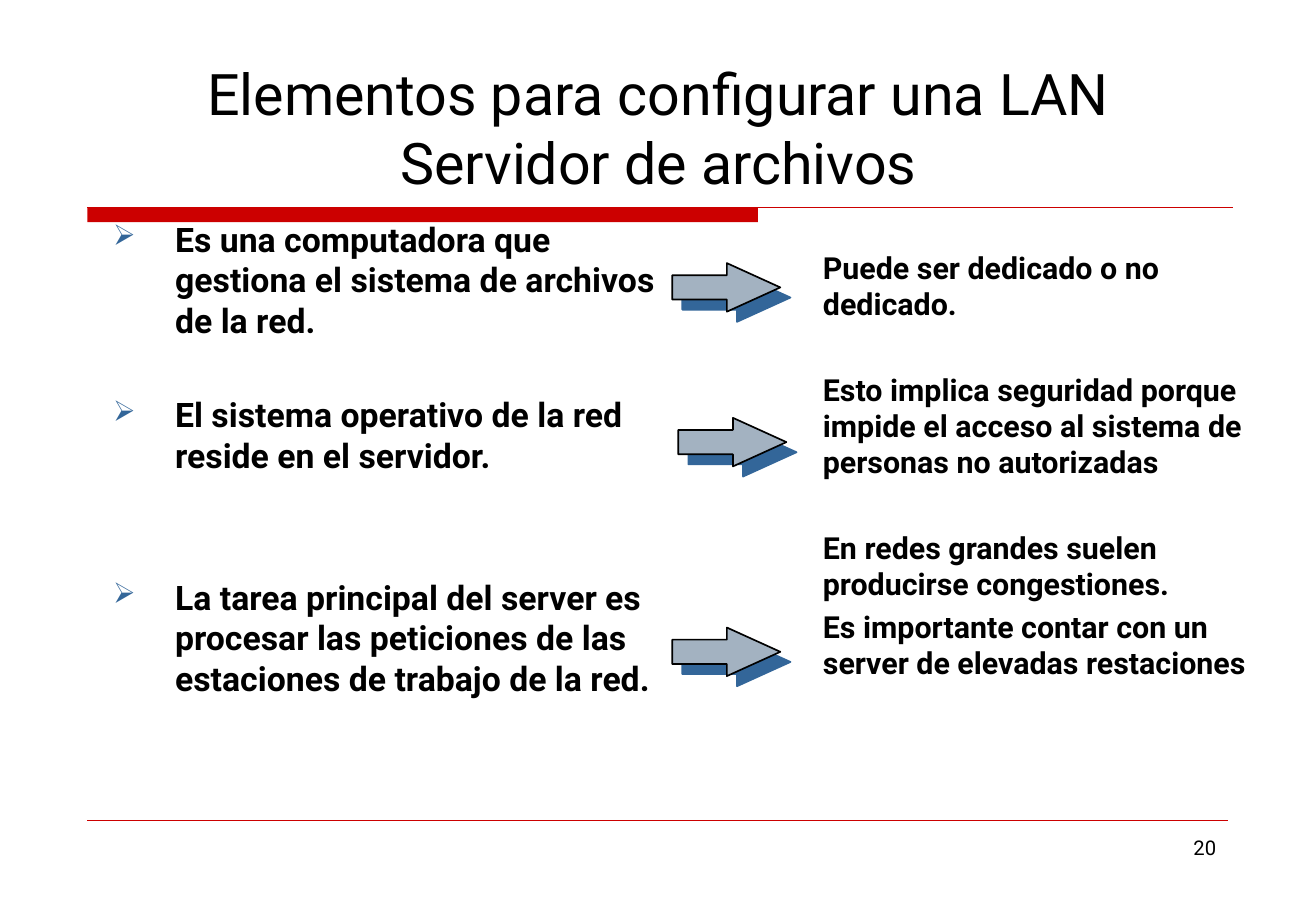
from typing import NamedTuple

from lxml.etree import SubElement
from pptx import Presentation
from pptx.dml.color import RGBColor
from pptx.enum.shapes import MSO_CONNECTOR as Link, MSO_SHAPE as Shape
from pptx.enum.text import MSO_ANCHOR as Anchor, PP_ALIGN as Align
from pptx.oxml.ns import qn
from pptx.util import Inches, Pt

BLACK = RGBColor(0, 0, 0)
RED = RGBColor(0xCC, 0, 0)
BLUE = RGBColor(0x33, 0x66, 0x99)
GREY_BLUE = RGBColor(0xA3, 0xB2, 0xC1)
FONT = "Roboto"
COLUMNS, ROWS = 130, 90
CELL = Inches(1 / 12)
INDENT = 6.12


class Box(NamedTuple):
    """A rectangle in grid columns and rows."""
    left: float
    top: float
    width: float
    height: float

    def lengths(self):
        """Return the rectangle in slide units."""
        return [cells(value) for value in self]


def cells(count):
    """Convert grid cells to slide units."""
    return int(count * CELL)


def add_text_box(page, box, anchor=Anchor.TOP):
    """Add a wrapping text frame."""
    frame = page.shapes.add_textbox(*box.lengths()).text_frame
    frame.word_wrap = True
    frame.vertical_anchor = anchor
    return frame


def add_span(para, text, size, bold=False):
    """Add one run of black text."""
    span = para.add_run()
    span.text = text
    span.font.name = FONT
    span.font.size = Pt(size)
    span.font.bold = bold
    span.font.color.rgb = BLACK


def add_rule(page, left, top, width, weight):
    """Add a horizontal red line."""
    rule = page.shapes.add_connector(
        Link.STRAIGHT, cells(left), cells(top), cells(left + width), cells(top))
    rule.line.color.rgb = RED
    rule.line.width = Pt(weight)
    SubElement(rule._element.spPr, qn("a:effectLst"))


def add_header(page, box, lines):
    """Add the title with its red bar and rule below."""
    para = add_text_box(page, box, Anchor.BOTTOM).paragraphs[0]
    para.alignment = Align.CENTER
    for index, line in enumerate(lines):
        if index:
            para.add_line_break()
        add_span(para, line, 34)
    left, top = box.left + 0.48, box.top + box.height + 0.6
    bar = page.shapes.add_shape(Shape.RECTANGLE, *Box(left, top, 66.24, 1.44).lengths())
    bar.shadow.inherit = False
    bar.fill.solid()
    bar.fill.fore_color.rgb = RED
    bar.line.fill.background()
    add_rule(page, left, top, 113.16, 0.75)


def add_footer(page, box, number):
    """Add the thin rule and the page number."""
    add_rule(page, box.left, box.top, box.width, 0.25)
    share = box.width / 4
    number_box = Box(box.left + 3 * share, box.top + 0.96, share, box.height - 0.96)
    para = add_text_box(page, number_box).paragraphs[0]
    para.alignment = Align.RIGHT
    add_span(para, number, 12)


def set_bullet(para):
    """Hang the paragraph behind a blue arrowhead bullet."""
    properties = para._p.get_or_add_pPr()
    properties.set("indent", str(-cells(INDENT)))
    color = SubElement(properties, qn("a:buClr"))
    SubElement(color, qn("a:srgbClr"), val=str(BLUE))
    SubElement(properties, qn("a:buSzPct"), val="85000")
    SubElement(properties, qn("a:buChar"), char="➢")


def add_column(page, box, items, size, bulleted=False):
    """Add a column of bold paragraphs given as (space before, text)."""
    frame = add_text_box(page, box)
    for index, (gap, text) in enumerate(items):
        para = frame.add_paragraph() if index else frame.paragraphs[0]
        para.space_before = Pt(gap)
        para._p.get_or_add_pPr().set("marL", str(cells(INDENT)))
        if bulleted:
            set_bullet(para)
        add_span(para, text, size, bold=True)


def add_arrow(page, box):
    """Add a right arrow with a hard blue shadow."""
    arrow = page.shapes.add_shape(Shape.RIGHT_ARROW, *box.lengths())
    arrow.adjustments[0] = 0.5
    arrow.adjustments[1] = 1.1
    arrow.fill.solid()
    arrow.fill.fore_color.rgb = GREY_BLUE
    arrow.line.color.rgb = BLACK
    arrow.line.width = Pt(1)
    arrow.shadow.inherit = False
    effects = arrow._element.spPr.find(qn("a:effectLst"))
    shadow = SubElement(effects, qn("a:outerShdw"), blurRad="0", dist=str(Pt(8.5)),
                        dir=str(45 * 60000), algn="ctr", rotWithShape="0")
    SubElement(shadow, qn("a:srgbClr"), val=str(BLUE))


def add_body(page, box):
    """Add both text columns and the arrows between them."""
    features = [
        (0, "Es una computadora que gestiona el sistema de archivos de la red."),
        (32, "El sistema operativo de la red reside en el servidor."),
        (60, "La tarea principal del server es procesar las peticiones de las "
             "estaciones de trabajo de la red."),
    ]
    effects = [
        (0, "Puede ser dedicado o no dedicado."),
        (29, "Esto implica seguridad porque impide el acceso al sistema de "
             "personas no autorizadas"),
        (29, "En redes grandes suelen producirse congestiones."),
        (3.6, "Es importante contar con un server de elevadas restaciones"),
    ]
    left, top, width, height = box
    add_column(page, Box(left, top, 56, height), features, 20, bulleted=True)
    add_column(page, Box(left + width - 54, top + 3, 54, 45), effects, 18)
    for across, down in [(56.4, 5), (57, 20.28), (56.4, 41)]:
        add_arrow(page, Box(left + across, top + down, 10.68, 4.8))


def main():
    """Build and save the slide."""
    deck = Presentation()
    deck.slide_width, deck.slide_height = cells(COLUMNS), cells(ROWS)
    page = deck.slides.add_slide(deck.slide_layouts[6])
    add_header(page, Box(8.16, 3.96, 113.76, 15.96),
               ["Elementos para configurar una LAN", "Servidor de archivos"])
    add_body(page, Box(10, 21, 118, 55))
    add_footer(page, Box(8.64, 81, 112.68, 7.2), "20")
    deck.save("out.pptx")


if __name__ == "__main__":
    main()
